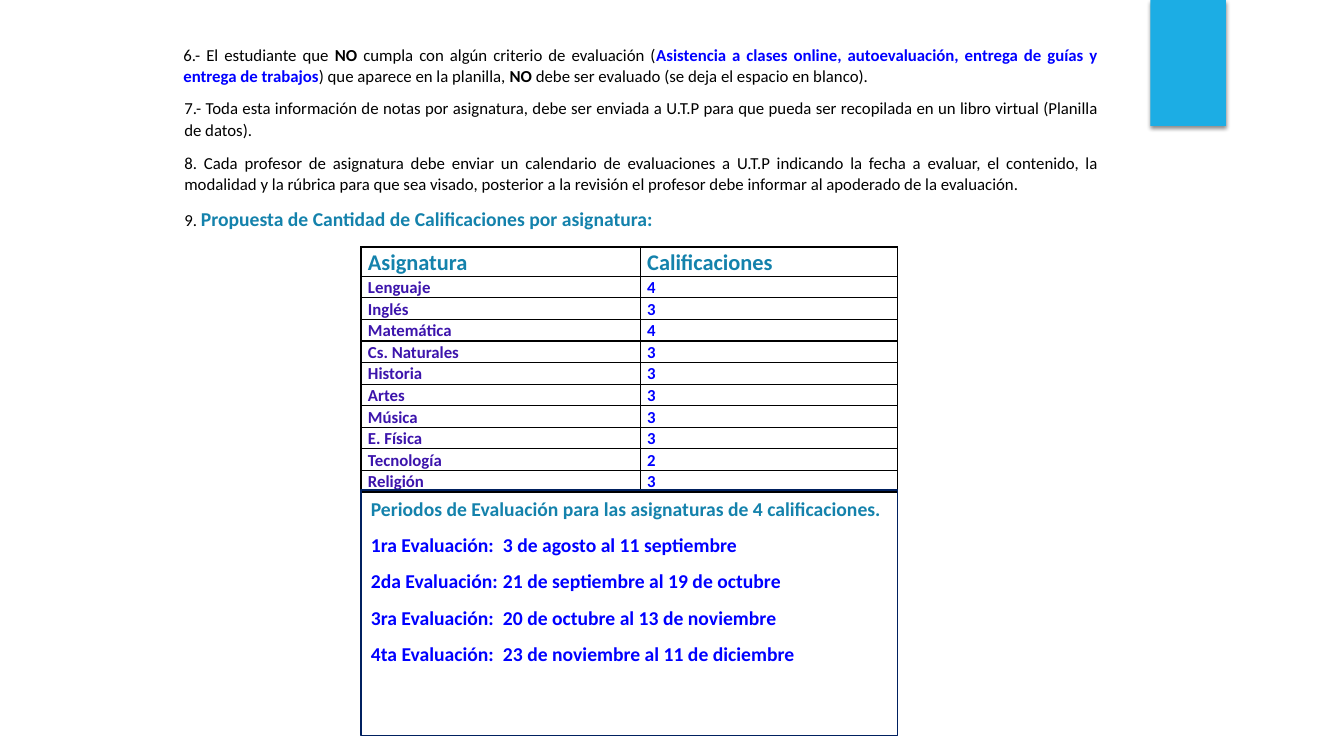
from dataclasses import dataclass

from lxml import etree
from pptx import Presentation
from pptx.dml.color import RGBColor
from pptx.enum.shapes import MSO_SHAPE
from pptx.enum.text import MSO_ANCHOR, PP_ALIGN
from pptx.oxml import parse_xml
from pptx.oxml.ns import nsdecls, qn
from pptx.util import Inches, Pt


@dataclass(frozen=True)
class Theme:
    font: str = "Calibri"
    black: str = "000000"
    blue: str = "0000FF"
    teal: str = "1482AC"
    purple: str = "3C14AC"
    navy: str = "002060"
    accent: str = "1CADE4"
    body: int = 12
    heading: int = 14
    table_head: int = 16
    line_spacing: float = 1.07
    space_after: int = 8
    line: int = 1


T = Theme()

RULE_6 = [
    [("6.- El estudiante que ",), ("NO", T.black, True),
     (" cumpla con algún criterio de evaluación (",),
     ("Asistencia a clases online, autoevaluación, entrega de guías y "
      "entrega de trabajos", T.blue, True),
     (") que aparece en la planilla, ",), ("NO", T.black, True),
     (" debe ser evaluado (se deja el espacio en blanco).",)],
]
RULES_7_TO_9 = [
    [("7.- Toda esta información de notas por asignatura, debe ser enviada a "
      "U.T.P para que pueda ser recopilada en un libro virtual (Planilla de "
      "datos).",)],
    [("8. Cada profesor de asignatura debe enviar un calendario de "
      "evaluaciones a U.T.P indicando la fecha a evaluar, el contenido, la "
      "modalidad y la rúbrica para que sea visado, posterior a la revisión el "
      "profesor debe informar al apoderado de la evaluación.",)],
    [("9. ",), ("Propuesta de Cantidad de Calificaciones por asignatura:",
                T.teal, True, T.heading)],
]
GRADES = [
    ("Lenguaje", 4), ("Inglés", 3), ("Matemática", 4), ("Cs. Naturales", 3),
    ("Historia", 3), ("Artes", 3), ("Música", 3), ("E. Física", 3),
    ("Tecnología", 2), ("Religión", 3),
]
PERIODS_TITLE = "Periodos de Evaluación para las asignaturas de 4 calificaciones."
PERIODS = [
    ("1ra", "3 de agosto al 11 septiembre"),
    ("2da", "21 de septiembre al 19 de octubre"),
    ("3ra", "20 de octubre al 13 de noviembre"),
    ("4ta", "23 de noviembre al 11 de diciembre"),
]


def add_run(p, text, color=T.black, bold=False, size=T.body):
    r = p.add_run()
    r.text = text
    r.font.name = T.font
    r.font.size = Pt(size)
    r.font.bold = bold
    r.font.color.rgb = RGBColor.from_string(color)


def fill_text(tf, paragraphs, align=PP_ALIGN.JUSTIFY, tab=None):
    """Write paragraphs, each a list of (text, color, bold, size) runs."""
    tf.word_wrap = True
    for i, runs in enumerate(paragraphs):
        p = tf.add_paragraph() if i else tf.paragraphs[0]
        p.alignment = align
        p.line_spacing = T.line_spacing
        p.space_after = Pt(T.space_after)
        if tab:
            tabs = etree.SubElement(p._p.get_or_add_pPr(), qn("a:tabLst"))
            etree.SubElement(tabs, qn("a:tab"), pos=str(Inches(tab)), algn="l")
        for run in runs:
            add_run(p, *run)


def add_accent(slide, x, y, w, h):
    sp = slide.shapes.add_shape(MSO_SHAPE.RECTANGLE, *map(Inches, (x, y, w, h)))
    sp.fill.solid()
    sp.fill.fore_color.rgb = RGBColor.from_string(T.accent)
    sp.line.fill.background()
    sp._element.spPr.append(parse_xml(
        f'<a:effectLst {nsdecls("a")}><a:outerShdw blurRad="{Pt(3)}" '
        f'dist="{Pt(2)}" dir="5400000" rotWithShape="0">'
        f'<a:srgbClr val="{T.black}"><a:alpha val="45000"/></a:srgbClr>'
        '</a:outerShdw></a:effectLst>'))


def add_rules(slide, paragraphs, x, y, w, h):
    box = slide.shapes.add_textbox(*map(Inches, (x, y, w, h)))
    fill_text(box.text_frame, paragraphs)


def set_borders(cell):
    tcPr = cell._tc.get_or_add_tcPr()
    for i, side in enumerate(("lnL", "lnR", "lnT", "lnB")):
        tcPr.insert(i, parse_xml(
            f'<a:{side} {nsdecls("a")} w="{Pt(T.line)}"><a:solidFill>'
            f'<a:srgbClr val="{T.black}"/></a:solidFill></a:{side}>'))


def add_grades(slide, x, y, w, h, first_col=2.77, head_h=0.29):
    rows = [[("Asignatura", T.teal, True, T.table_head),
             ("Calificaciones", T.teal, True, T.table_head)]]
    rows += [[(name, T.purple, True), (str(count), T.blue, True)]
             for name, count in GRADES]
    table = slide.shapes.add_table(
        len(rows), 2, *map(Inches, (x, y, w, h))).table
    table.first_row = table.horz_banding = False
    table.columns[0].width = Inches(first_col)
    table.columns[1].width = Inches(w - first_col)
    for i, runs in enumerate(rows):
        table.rows[i].height = Inches(
            (h - head_h) / len(GRADES) if i else head_h)
        for cell, run in zip(table.rows[i].cells, runs):
            cell.margin_left = cell.margin_right = Inches(0.07)
            cell.margin_top = cell.margin_bottom = 0
            cell.fill.background()
            set_borders(cell)
            fill_text(cell.text_frame, [[run]])


def add_periods(slide, x, y, w, h):
    sp = slide.shapes.add_shape(MSO_SHAPE.RECTANGLE, *map(Inches, (x, y, w, h)))
    sp.shadow.inherit = False
    sp.fill.background()
    sp.line.color.rgb = RGBColor.from_string(T.navy)
    sp.line.width = Pt(T.line)
    tf = sp.text_frame
    tf.vertical_anchor = MSO_ANCHOR.TOP
    lines = [[(PERIODS_TITLE, T.teal, True, T.heading)]]
    lines += [[(f"{order} Evaluación:\t{dates}", T.blue, True, T.heading)]
              for order, dates in PERIODS]
    fill_text(tf, lines, PP_ALIGN.LEFT, tab=1.31)


def main():
    prs = Presentation()
    prs.slide_width, prs.slide_height = Inches(13.33), Inches(7.5)
    slide = prs.slides.add_slide(prs.slide_layouts[6])
    add_accent(slide, 11.41, 0, 0.75, 1.25)
    add_rules(slide, RULE_6, 1.72, 0.38, 9.27, 0.52)
    add_rules(slide, RULES_7_TO_9, 1.73, 0.91, 9.27, 1.43)
    add_grades(slide, 3.58, 2.45, 5.32, 2.43)
    add_periods(slide, 3.58, 4.86, 5.32, 2.44)
    prs.save("out.pptx")


if __name__ == "__main__":
    main()
